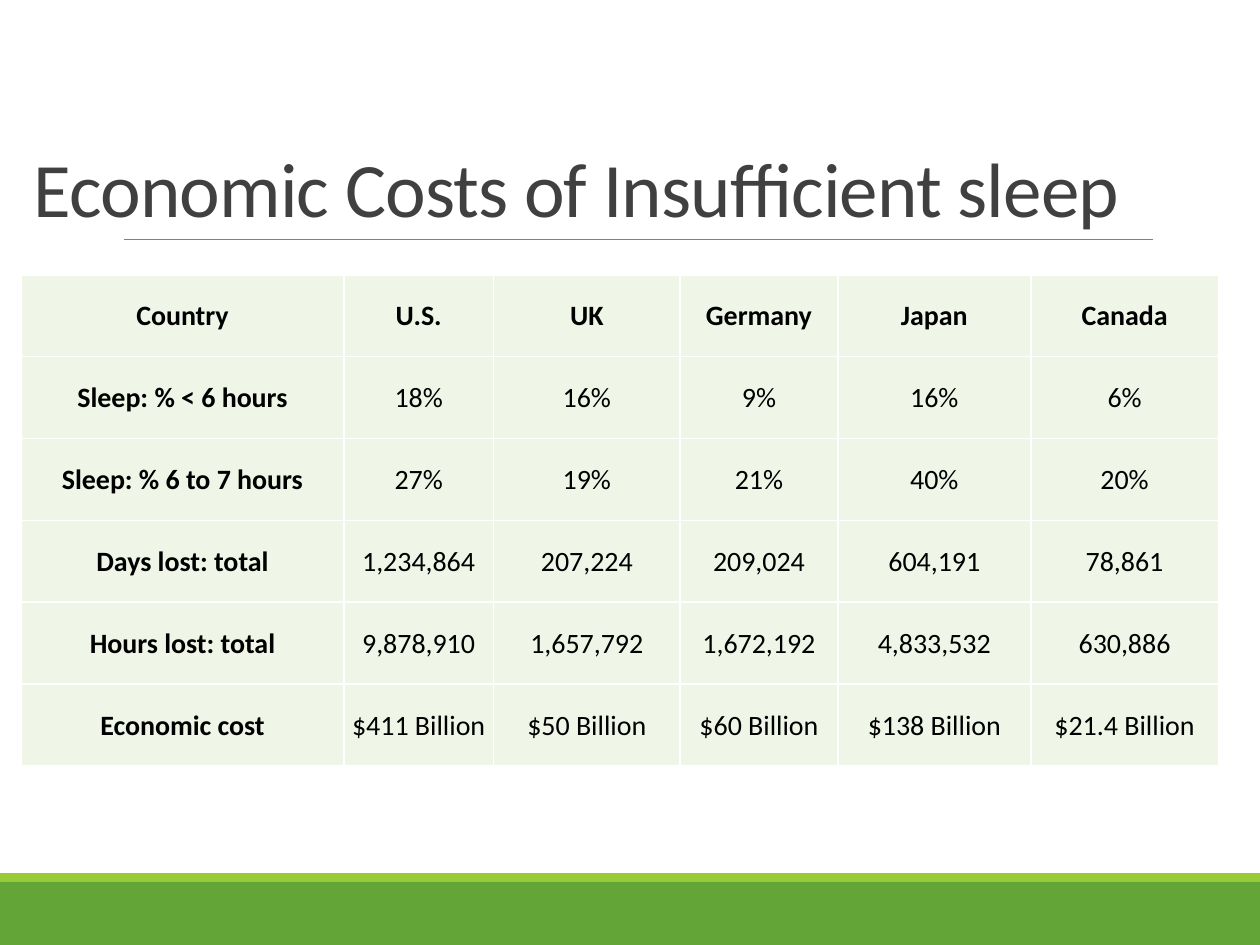
"""Build a slide with a table of the economic costs of insufficient sleep."""
from dataclasses import dataclass

from lxml import etree
from pptx import Presentation
from pptx.dml.color import RGBColor
from pptx.enum.shapes import MSO_CONNECTOR, MSO_SHAPE
from pptx.enum.text import MSO_ANCHOR, PP_ALIGN
from pptx.oxml.ns import qn
from pptx.util import Cm, Pt

RECT = MSO_SHAPE.RECTANGLE
LINE = MSO_CONNECTOR.STRAIGHT
MIDDLE, BOTTOM = MSO_ANCHOR.MIDDLE, MSO_ANCHOR.BOTTOM
CENTER = PP_ALIGN.CENTER

WIDTH, HEIGHT = 25.4, 19.05
COLS = (6.5, 3.02, 3.76, 3.18, 3.89, 3.78)
ROW = 1.65
DATA = (
    ("Country", "U.S.", "UK", "Germany", "Japan", "Canada"),
    ("Sleep: % < 6 hours", "18%", "16%", "9%", "16%", "6%"),
    ("Sleep: % 6 to 7 hours", "27%", "19%", "21%", "40%", "20%"),
    ("Days lost: total", "1,234,864", "207,224", "209,024", "604,191", "78,861"),
    ("Hours lost: total", "9,878,910", "1,657,792", "1,672,192", "4,833,532", "630,886"),
    ("Economic cost", "$411 Billion", "$50 Billion", "$60 Billion", "$138 Billion", "$21.4 Billion"),
)


@dataclass(frozen=True)
class Theme:
    font: str = "Calibri"
    green: str = "63A537"
    lime: str = "99CB38"
    gray: str = "808080"
    dark: str = "404040"
    black: str = "000000"
    pale: str = "EFF6E8"
    white: str = "FFFFFF"
    head: int = 44
    body: int = 16


class Maker:
    def __init__(self, slide, theme):
        self.slide = slide
        self.theme = theme

    def paint(self, fill, color):
        fill.solid()
        fill.fore_color.rgb = RGBColor.from_string(color)

    def style(self, run, size, color, bold=False):
        font = run.font
        font.name, font.size, font.bold = self.theme.font, Pt(size), bold
        font.color.rgb = RGBColor.from_string(color)

    def bar(self, top, height, color):
        shape = self.slide.shapes.add_shape(RECT, 0, Cm(top), Cm(WIDTH), Cm(height))
        shape.shadow.inherit = False
        self.paint(shape.fill, color)
        shape.line.fill.background()

    def rule(self, left, right, top):
        line = self.slide.shapes.add_connector(LINE, Cm(left), Cm(top), Cm(right), Cm(top))
        line.line.width = Pt(0.5)
        line.line.color.rgb = RGBColor.from_string(self.theme.gray)
        etree.SubElement(line._element.spPr, qn("a:effectLst"))

    def title(self, text, left, top, width, height):
        box = self.slide.shapes.add_textbox(Cm(left), Cm(top), Cm(width), Cm(height))
        frame = box.text_frame
        frame.word_wrap = True
        frame.vertical_anchor = BOTTOM
        frame.text = text
        para = frame.paragraphs[0]
        para.line_spacing = 0.85
        run = para.runs[0]
        self.style(run, self.theme.head, self.theme.dark)
        run._r.get_or_add_rPr().set("spc", "-50")

    def border(self, cell):
        props = cell._tc.get_or_add_tcPr()
        for side in ("lnL", "lnR", "lnT", "lnB"):
            edge = etree.SubElement(props, qn(f"a:{side}"), w=str(Pt(1)))
            fill = etree.SubElement(edge, qn("a:solidFill"))
            etree.SubElement(fill, qn("a:srgbClr"), val=self.theme.white)

    def cell(self, cell, text, bold):
        self.border(cell)
        self.paint(cell.fill, self.theme.pale)
        cell.vertical_anchor = MIDDLE
        cell.margin_left = cell.margin_right = cell.margin_top = Cm(0.02)
        cell.margin_bottom = 0
        cell.text_frame.text = text
        para = cell.text_frame.paragraphs[0]
        para.alignment = CENTER
        self.style(para.runs[0], self.theme.body, self.theme.black, bold)

    def table(self, data, left, top):
        table = self.slide.shapes.add_table(
            len(data), len(COLS), Cm(left), Cm(top), Cm(sum(COLS)), Cm(ROW * len(data))
        ).table
        table.first_row = table.horz_banding = False
        for col, width in zip(table.columns, COLS):
            col.width = Cm(width)
        for r, row in enumerate(data):
            table.rows[r].height = Cm(ROW)
            for c, text in enumerate(row):
                self.cell(table.cell(r, c), text, r == 0 or c == 0)


def main():
    deck = Presentation()
    deck.slide_width, deck.slide_height = Cm(WIDTH), Cm(HEIGHT)
    theme = Theme()
    maker = Maker(deck.slides.add_slide(deck.slide_layouts[6]), theme)
    maker.bar(17.78, 1.27, theme.green)
    maker.bar(17.6, 0.18, theme.lime)
    maker.rule(2.49, 23.24, 4.83)
    maker.title("Economic Costs of Insufficient sleep", 0.43, 0.79, 22.81, 4.04)
    maker.table(DATA, 0.43, 5.54)
    deck.save("out.pptx")


if __name__ == "__main__":
    main()
